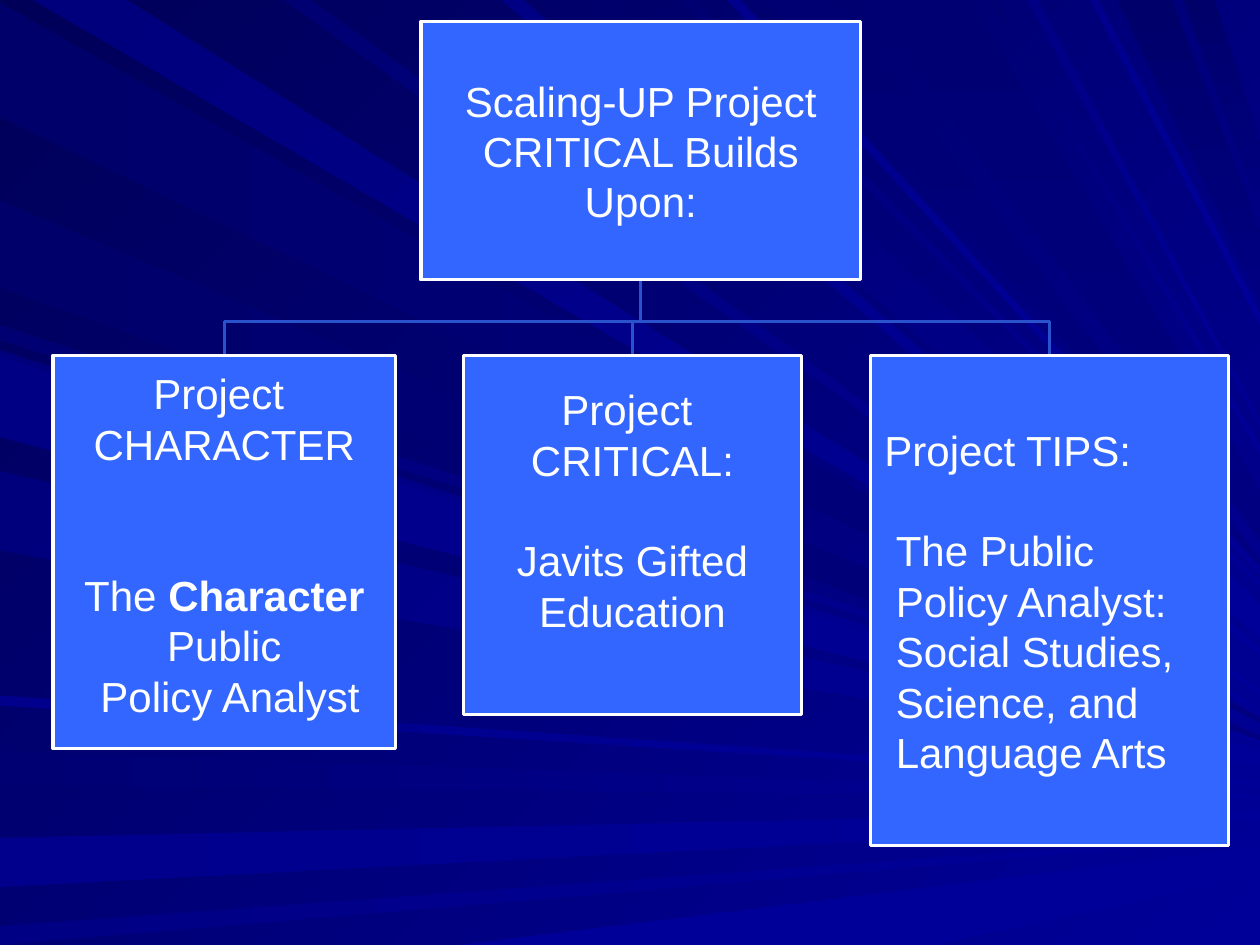
from typing import NamedTuple

from pptx import Presentation
from pptx import util as u
from pptx.dml import color
from pptx.enum import shapes, text
from pptx.oxml import xmlchemy

COLUMNS, ROWS = 10, 7.5
CELL = u.Inches(1)
SPACE = 0.09  # width of one space at the text size, in columns
LINE = 28.8  # height of one text line, in points
BUS_ROW = 2.55
CHILD_ROW = 2.82

COLOURS = {
    "box": "3366FF", "white": "FFFFFF", "link": "2952CC",
    "night": "000058", "ink": "00006B", "navy": "000073", "deep": "00007D",
    "royal": "000085", "soft": "00008C", "dusk": "000080", "bright": "000099",
}


class Ray(NamedTuple):
    """A beam from a span of one slide edge to a tip on the right edge."""
    edge: str
    near: float
    far: float
    tip: float
    start: str
    end: str = "bright"
    angle: int = 45
    flare: float = 0.03  # height of the tip


class Line(NamedTuple):
    runs: list  # (wording, bold)
    gap: int = 0  # text lines left free above
    left: float = 0
    right: float = 0


class Box(NamedTuple):
    column: float
    row: float
    columns: float
    rows: float
    lines: list
    align: text.PP_ALIGN = text.PP_ALIGN.CENTER
    bottom: float = 0.02


RAYS = [
    Ray("left", 0.02, 0.93, 5.7, "ink", "dusk", 0),
    Ray("top", 0.26, 1.01, 5.63, "deep"),
    Ray("left", 5.96, 6.23, 6.31, "navy", angle=0),
    Ray("left", 6.65, 7.04, 6.43, "soft", angle=0, flare=0.08),
    Ray("left", 7.35, 7.5, 6.62, "royal", angle=0),
    Ray("bottom", 3.64, 7.42, 6.72, "bright", flare=0.22),
    Ray("left", 2.58, 2.7, 5.88, "navy"),
    Ray("left", 1.59, 2.28, 5.84, "ink", "dusk", 0),
    Ray("top", 3.98, 4.16, 5.15, "royal", flare=0.06),
    Ray("top", 4.26, 4.92, 4.79, "ink", flare=0.28),
    Ray("top", 5.4, 5.52, 4.62, "navy"),
    Ray("top", 6.06, 6.61, 4.45, "navy", "dusk", 90),
    Ray("top", 8.87, 9.3, 1.83, "ink", "dusk", 90, 0.54),
    Ray("top", 9.39, 9.64, 1.14, "ink", "dusk", 90, 0.53),
    Ray("left", 2.78, 3.42, 5.96, "deep", flare=0.06),
    Ray("left", 3.74, 4.37, 6.05, "deep"),
    Ray("left", 5.52, 5.6, 6.21, "soft", angle=0),
    Ray("top", 2.25, 2.47, 5.47, "navy", flare=0.05),
    Ray("top", 5.77, 5.88, 4.53, "soft"),
    Ray("top", 6.86, 7.7, 3.9, "navy", "dusk", 90, 0.38),
    Ray("top", 7.85, 7.92, 3.54, "navy", flare=0.06),
    Ray("top", 8.15, 8.24, 3.35, "royal"),
    Ray("top", 8.65, 8.72, 2.49, "soft", flare=0.09),
    Ray("left", 2.83, 3.47, 6.01, "royal", angle=0, flare=0.05),
]

ROOT = Box(3.34, 0.17, 3.49, 2.05, [Line([("Scaling-UP Project CRITICAL Builds Upon:", False)])])
CHILDREN = [
    Box(0.42, CHILD_ROW, 2.72, 3.12, [
        Line([("Project", False)], right=SPACE),
        Line([("CHARACTER", False)]),
        Line([("The ", False), ("Character", True), (" Public", False)], gap=2),
        Line([("Policy Analyst", False)], left=SPACE),
    ], bottom=0.14),
    Box(3.68, CHILD_ROW, 2.68, 2.85, [
        Line([("Project", False)], right=SPACE),
        Line([("CRITICAL:", False)]),
        Line([("Javits Gifted Education", False)], gap=1),
    ], bottom=0.42),
    Box(6.91, CHILD_ROW, 2.84, 3.89, [
        Line([("Project TIPS:", False)], left=SPACE),
        Line([("The Public", False)], gap=1, left=2 * SPACE),
        *(Line([(wording, False)], left=2 * SPACE) for wording in
          ("Policy Analyst:", "Social Studies,", "Science, and", "Language Arts")),
    ], align=text.PP_ALIGN.LEFT),
]


def rgb(name: str) -> color.RGBColor:
    return color.RGBColor.from_string(COLOURS[name])


def cells(*lengths: float) -> list:
    return [u.Emu(round(length * CELL)) for length in lengths]


def apply(target, values: dict) -> None:
    for name, value in values.items():
        setattr(target, name, value)


def paint(fill, start: str, end: str, angle: int) -> None:
    if start == end:
        fill.solid()
        fill.fore_color.rgb = rgb(start)
        return
    fill.gradient()
    fill.gradient_angle = (360 - angle) % 360
    for stop, name in zip(fill.gradient_stops, (start, end)):
        stop.color.rgb = rgb(name)


def draw_ray(slide, ray: Ray) -> None:
    if ray.edge == "left":
        base = [(0, ray.far), (0, ray.near)]
    else:
        level = 0 if ray.edge == "top" else ROWS
        base = [(ray.near, level), (ray.far, level)]
    tips = [(COLUMNS, ray.tip), (COLUMNS, ray.tip + ray.flare)]
    if ray.edge == "bottom":
        tips.reverse()
    first, *others = [cells(*point) for point in base + tips]
    builder = slide.shapes.build_freeform(*first)
    builder.add_line_segments(others, close=True)
    shape = builder.convert_to_shape()
    shape.shadow.inherit = False
    shape.line.fill.background()
    paint(shape.fill, ray.start, ray.end, ray.angle)


def draw_link(slide, *ends: float):
    link = slide.shapes.add_connector(shapes.MSO_CONNECTOR.STRAIGHT, *cells(*ends))
    link.line.color.rgb = rgb("link")
    link.line.width = u.Pt(2)
    link._element.spPr.append(xmlchemy.OxmlElement("a:effectLst"))
    return link


def draw_box(slide, box: Box):
    shape = slide.shapes.add_shape(shapes.MSO_SHAPE.RECTANGLE, *cells(*box[:4]))
    shape.shadow.inherit = False
    paint(shape.fill, "box", "box", 0)
    shape.line.color.rgb = rgb("white")
    shape.line.width = u.Pt(2)
    frame = shape.text_frame
    side, bottom = cells(0.02, box.bottom)
    apply(frame, {"word_wrap": True, "vertical_anchor": text.MSO_ANCHOR.MIDDLE,
                  "margin_left": side, "margin_right": side,
                  "margin_top": side, "margin_bottom": bottom})
    for index, line in enumerate(box.lines):
        paragraph = frame.paragraphs[0] if index == 0 else frame.add_paragraph()
        paragraph.alignment = box.align
        if line.gap:
            paragraph.space_before = u.Pt(line.gap * LINE)
        properties = paragraph._p.get_or_add_pPr()
        for side_name, indent in zip(("marL", "marR"), cells(line.left, line.right)):
            properties.set(side_name, str(indent))
        for wording, bold in line.runs:
            run = paragraph.add_run()
            run.text = wording
            apply(run.font, {"name": "Arial", "size": u.Pt(24), "bold": bold})
            run.font.color.rgb = rgb("white")
    return shape


def main() -> None:
    presentation = Presentation()
    apply(presentation, dict(zip(("slide_width", "slide_height"), cells(COLUMNS, ROWS))))
    slide = presentation.slides.add_slide(presentation.slide_layouts[6])
    paint(slide.background.fill, "night", "bright", 45)
    for ray in RAYS:
        draw_ray(slide, ray)

    middles = [box.column + box.columns / 2 for box in CHILDREN]
    root_middle = ROOT.column + ROOT.columns / 2
    trunk = draw_link(slide, root_middle, ROOT.row + ROOT.rows, root_middle, BUS_ROW)
    draw_link(slide, middles[0], BUS_ROW, middles[-1], BUS_ROW)
    drops = [draw_link(slide, middle, BUS_ROW, middle, CHILD_ROW) for middle in middles]

    trunk.begin_connect(draw_box(slide, ROOT), 2)
    for drop, box in zip(drops, CHILDREN):
        drop.end_connect(draw_box(slide, box), 0)
    presentation.save("out.pptx")


if __name__ == "__main__":
    main()
